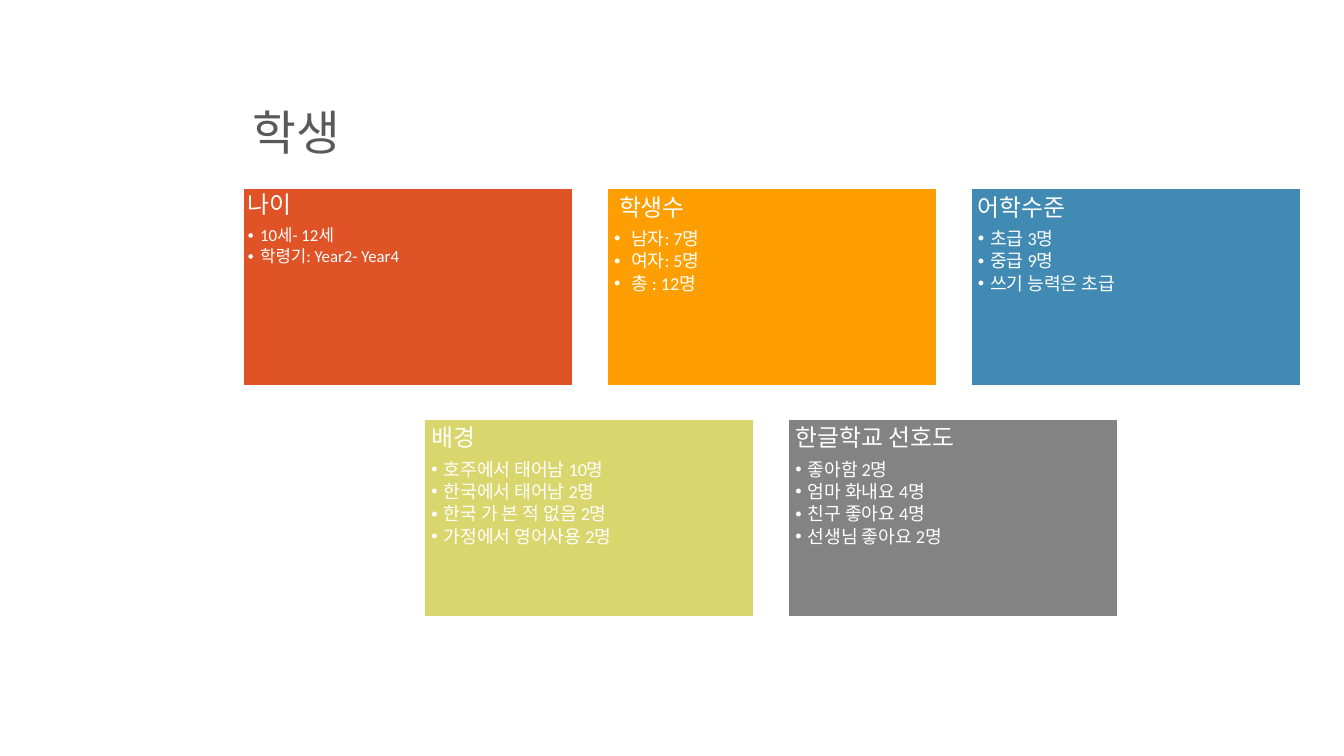
from dataclasses import dataclass

from lxml import etree
from pptx import Presentation
from pptx.dml.color import RGBColor
from pptx.enum.shapes import MSO_SHAPE
from pptx.enum.text import MSO_ANCHOR, PP_ALIGN
from pptx.oxml.ns import qn
from pptx.util import Emu, Pt

RECT = MSO_SHAPE.RECTANGLE
TOP, BOTTOM = MSO_ANCHOR.TOP, MSO_ANCHOR.BOTTOM
LEFT = PP_ALIGN.LEFT

SCALE = 9144  # EMU per px, 100 px to the inch
WIDE, HIGH = 1333, 750
CARD_W, CARD_H, GAP = 327, 196, 34
CENTRE, FIRST_TOP, PITCH = 765, 187, 229
HANG = 12


@dataclass(frozen=True)
class Theme:
    title: str = "595959"
    white: str = "FFFFFF"
    title_font: str = "Noto Sans CJK KR"
    card_font: str = "Calibri"
    title_size: int = 34
    head_size: int = 17
    item_size: int = 13
    small_size: int = 12


@dataclass(frozen=True)
class Card:
    head: str
    fill: str
    items: tuple[str, ...]
    size: int
    inset: int = 7
    shift: int = 0


THEME = Theme()
ROWS = (
    (
        Card("나이", "DF5327", ("10세- 12세", "학령기: Year2- Year4"),
             THEME.small_size, inset=5),
        Card("학생수", "FE9E00", ("남자: 7명", "여자: 5명", "총 : 12명"),
             THEME.item_size, shift=5),
        Card("어학수준", "418AB3", ("초급 3명", "중급 9명", "쓰기 능력은 초급"),
             THEME.item_size),
    ),
    (
        Card("배경", "D9D66D",
             ("호주에서 태어남 10명", "한국에서 태어남 2명",
              "한국 가 본 적 없음 2명", "가정에서 영어사용 2명"),
             THEME.item_size),
        Card("한글학교 선호도", "838383",
             ("좋아함 2명", "엄마 화내요 4명", "친구 좋아요 4명", "선생님 좋아요 2명"),
             THEME.item_size),
    ),
)


def px(value: int) -> Emu:
    return Emu(value * SCALE)


def write(para, text: str, size: int, font: str, colour: str) -> None:
    para.alignment = LEFT
    para.line_spacing = 0.9
    run = para.add_run()
    run.text = text
    for name, value in {"size": Pt(size), "name": font}.items():
        setattr(run.font, name, value)
    run.font.color.rgb = RGBColor.from_string(colour)


def space(para, percent: int) -> None:
    """Set the space after a paragraph as a share of its line."""
    para.space_after = Pt(0)
    after = para._p.pPr.find(qn("a:spcAft"))
    after.clear()
    etree.SubElement(after, qn("a:spcPct"), val=str(percent * 1000))


def indent(para, margin: int, hang: int = 0) -> None:
    props = para._p.get_or_add_pPr()
    props.set("marL", str(px(margin)))
    props.set("indent", str(px(-hang)))


def bullet(para) -> None:
    props = para._p.get_or_add_pPr()
    etree.SubElement(props, qn("a:buFont"), typeface="Arial")
    etree.SubElement(props, qn("a:buChar"), char="•")


def add_title(slide, text: str) -> None:
    box = slide.shapes.add_textbox(px(241), px(33), px(1025), px(131))
    frame = box.text_frame
    frame.word_wrap = True
    frame.vertical_anchor = BOTTOM
    para = frame.paragraphs[0]
    write(para, text, THEME.title_size, THEME.title_font, THEME.title)
    props = para.runs[0]._r.get_or_add_rPr()
    etree.SubElement(props, qn("a:ea"), typeface=THEME.title_font)


def add_card(slide, card: Card, left: int, top: int) -> None:
    shape = slide.shapes.add_shape(RECT, px(left), px(top), px(CARD_W), px(CARD_H))
    shape.shadow.inherit = False
    shape.fill.solid()
    shape.fill.fore_color.rgb = RGBColor.from_string(card.fill)
    shape.line.color.rgb = RGBColor.from_string(THEME.white)
    shape.line.width = Pt(1)

    frame = shape.text_frame
    frame.word_wrap = True
    frame.vertical_anchor = TOP
    for side in ("left", "top", "right", "bottom"):
        setattr(frame, f"margin_{side}", px(card.inset))

    head = frame.paragraphs[0]
    write(head, card.head, THEME.head_size, THEME.card_font, THEME.white)
    space(head, 35)
    indent(head, card.shift)
    for item in card.items:
        para = frame.add_paragraph()
        para.level = 1
        write(para, item, card.size, THEME.card_font, THEME.white)
        space(para, 15)
        indent(para, HANG + card.shift, HANG + card.shift)
        bullet(para)


def main() -> None:
    deck = Presentation()
    deck.slide_width, deck.slide_height = px(WIDE), px(HIGH)
    slide = deck.slides.add_slide(deck.slide_layouts[6])
    add_title(slide, "학생")
    for row, cards in enumerate(ROWS):
        span = len(cards) * (CARD_W + GAP) - GAP
        start = CENTRE - span // 2
        for col, card in enumerate(cards):
            add_card(slide, card, start + col * (CARD_W + GAP), FIRST_TOP + row * PITCH)
    deck.save("out.pptx")


if __name__ == "__main__":
    main()
